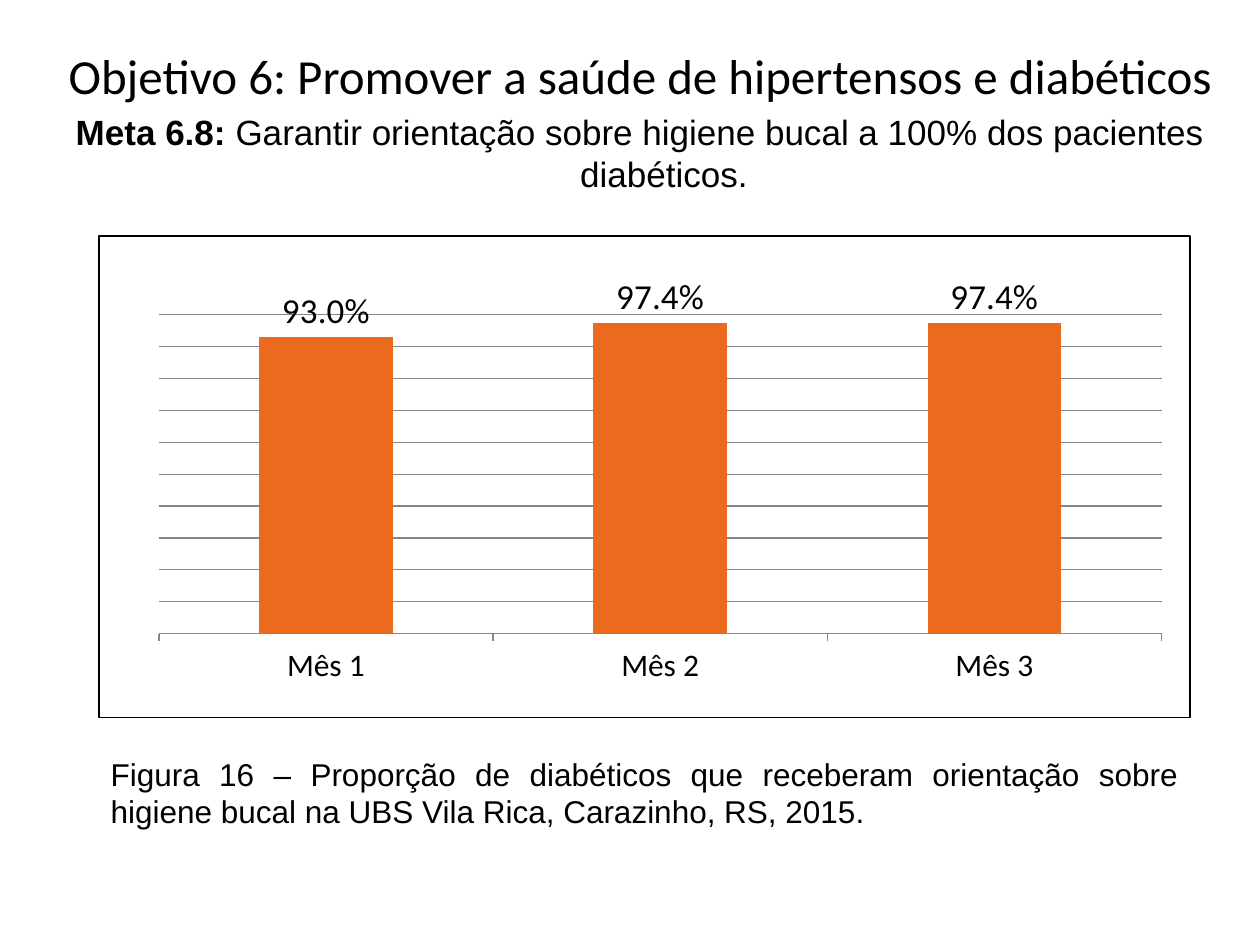
from pptx import Presentation
from pptx.chart.data import CategoryChartData
from pptx.dml.color import RGBColor
from pptx.enum.chart import XL_CHART_TYPE as ChartType
from pptx.enum.chart import XL_LABEL_POSITION as LabelPosition
from pptx.enum.chart import XL_TICK_LABEL_POSITION as TickLabels
from pptx.enum.chart import XL_TICK_MARK as TickMark
from pptx.enum.text import MSO_ANCHOR as Anchor
from pptx.enum.text import MSO_AUTO_SIZE as AutoSize
from pptx.enum.text import PP_ALIGN as Align
from pptx.oxml import parse_xml
from pptx.oxml.ns import nsdecls
from pptx.util import Inches, Pt

BLACK, ORANGE, GREY = "000000", "EC6920", "868686"
PERCENT = "0.0%"


def color(hex_value):
    return RGBColor.from_string(hex_value)


def assign(target, **values):
    for name, value in values.items():
        setattr(target, name, value)


class SlideBuilder:
    """Holds the style and the current slide; boxes are shares of the slide size."""

    heading_font, body_font = "Calibri", "Arial"

    def __init__(self, width, height):
        self.deck = Presentation()
        assign(self.deck, slide_width=Inches(width), slide_height=Inches(height))
        self.slide = self.deck.slides.add_slide(self.deck.slide_layouts[5])

    def box(self, left, top, width, height):
        across, down = self.deck.slide_width, self.deck.slide_height
        return int(left * across), int(top * down), int(width * across), int(height * down)

    def add_runs(self, paragraph, runs, size, font, align, before=0):
        """Fill a paragraph from (text, bold) pairs."""
        assign(paragraph, alignment=align, space_before=Pt(before))
        for text, bold in runs:
            run = paragraph.add_run()
            run.text = text
            assign(run.font, size=Pt(size), name=font, bold=bold)
            run.font.color.rgb = color(BLACK)

    def title(self, box, heading, goal_runs):
        title = self.slide.shapes.title
        for side, length in zip(("left", "top", "width", "height"), self.box(*box)):
            setattr(title, side, length)
        frame = title.text_frame
        assign(frame, word_wrap=True, auto_size=AutoSize.NONE, vertical_anchor=Anchor.TOP)
        lines = (([(heading, False)], 28, self.heading_font),
                 (goal_runs, 20, self.body_font))
        frame.add_paragraph()
        for paragraph, (runs, size, font) in zip(frame.paragraphs, lines):
            self.add_runs(paragraph, runs, size, font, Align.CENTER, before=size * 0.2)
            hanging = Inches(0.38)
            properties = paragraph._p.get_or_add_pPr()
            properties.set("marL", str(hanging))
            properties.set("indent", str(-hanging))

    def caption(self, box, text):
        frame = self.slide.shapes.add_textbox(*self.box(*box)).text_frame
        assign(frame, word_wrap=True, auto_size=AutoSize.SHAPE_TO_FIT_TEXT)
        self.add_runs(frame.paragraphs[0], [(text, False)], 18, self.body_font, Align.JUSTIFY)

    def column_chart(self, box, months, shares, plot_box):
        chart_data = CategoryChartData(number_format=PERCENT)
        chart_data.categories = months
        chart_data.add_series("Series 1", shares)
        chart = self.slide.shapes.add_chart(
            ChartType.COLUMN_CLUSTERED, *self.box(*box), chart_data).chart
        assign(chart, has_legend=False, has_title=False)
        assign(chart.font, size=Pt(10), name=self.heading_font)
        chart.font.color.rgb = color(BLACK)
        self.style_axes(chart)
        self.style_columns(chart.plots[0])
        self.frame_chart(chart, plot_box)

    def style_axes(self, chart):
        months, shares = chart.category_axis, chart.value_axis
        assign(months, tick_label_position=TickLabels.LOW,
               major_tick_mark=TickMark.OUTSIDE, has_major_gridlines=False)
        months.tick_labels.font.size = Pt(18)
        assign(shares, minimum_scale=0, maximum_scale=1, major_unit=0.1,
               has_major_gridlines=True, visible=False)
        assign(shares.tick_labels, number_format=PERCENT, number_format_is_linked=False)
        for line in (months.format.line, shares.major_gridlines.format.line):
            line.width = Pt(0.75)
            line.color.rgb = color(GREY)

    def style_columns(self, plot):
        assign(plot, gap_width=150, vary_by_categories=False, has_data_labels=True)
        fill = plot.series[0].format.fill
        fill.solid()
        fill.fore_color.rgb = color(ORANGE)
        labels = plot.data_labels
        assign(labels, show_value=True, number_format=PERCENT,
               number_format_is_linked=False, position=LabelPosition.OUTSIDE_END)
        labels.font.size = Pt(20)

    def frame_chart(self, chart, plot_box):
        """Fix the inner plot area and draw a thin border round the chart."""
        chart_node = chart._chartSpace.chart
        plot_area = chart_node.plotArea
        for layout in plot_area.xpath("c:layout"):
            plot_area.remove(layout)
        modes = "".join(f'<c:{side}Mode val="edge"/>' for side in "xy")
        sizes = "".join(f'<c:{side} val="{share}"/>' for side, share in zip("xywh", plot_box))
        plot_area.insert(0, parse_xml(
            f'<c:layout {nsdecls("c")}><c:manualLayout><c:layoutTarget val="inner"/>'
            f'{modes}{sizes}</c:manualLayout></c:layout>'))
        chart_node.addnext(parse_xml(
            f'<c:spPr {nsdecls("c", "a")}><a:noFill/><a:ln w="{Pt(0.75)}"><a:solidFill>'
            f'<a:srgbClr val="{BLACK}"/></a:solidFill></a:ln></c:spPr>'))

    def save(self):
        self.deck.save("out.pptx")


def main():
    builder = SlideBuilder(10, 7.5)
    left, width = 0.078, 0.867
    builder.title(
        (0.039, 0.041, 0.938, 0.208),
        "Objetivo 6: Promover a saúde de hipertensos e diabéticos",
        [("Meta 6.8: ", True),
         ("Garantir orientação sobre higiene bucal a 100% dos pacientes diabéticos.", False)])
    builder.column_chart(
        (left, 0.249, width, 0.511),
        [f"Mês {month}" for month in (1, 2, 3)], (0.93, 0.974, 0.974),
        plot_box=(0.055, 0.164, 0.919, 0.662))
    builder.caption(
        (left, 0.792, width, 0.095),
        "Figura 16 – Proporção de diabéticos que receberam orientação sobre "
        "higiene bucal na UBS Vila Rica, Carazinho, RS, 2015.")
    builder.save()


if __name__ == "__main__":
    main()
